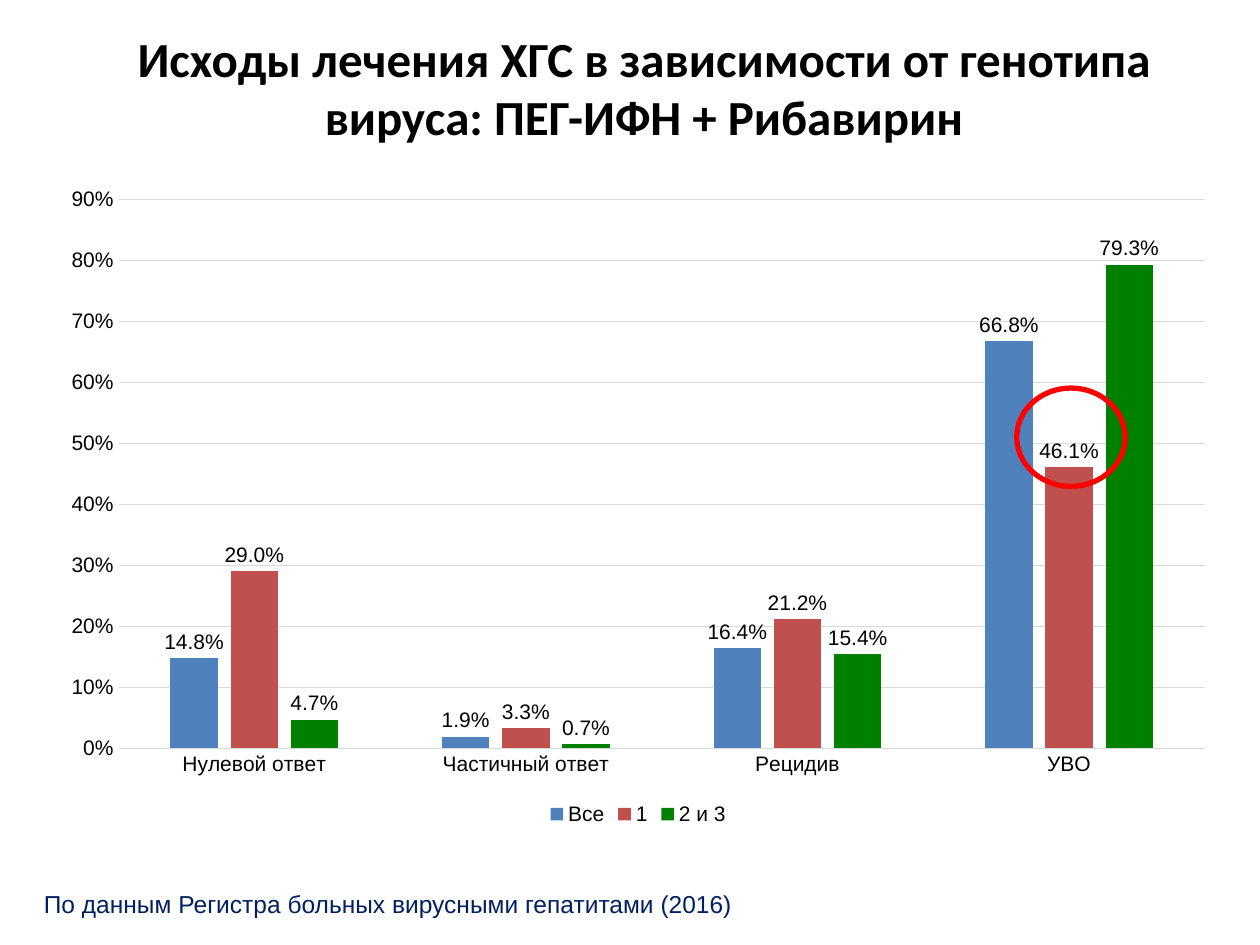
from dataclasses import dataclass

from pptx import Presentation
from pptx.chart.data import CategoryChartData
from pptx.dml.color import RGBColor
from pptx.enum.chart import XL_CHART_TYPE, XL_LABEL_POSITION, XL_LEGEND_POSITION, XL_TICK_MARK
from pptx.enum.shapes import MSO_SHAPE
from pptx.enum.text import MSO_ANCHOR, PP_ALIGN
from pptx.util import Inches, Pt

BLACK = "000000"
GRID_GREY = "D9D9D9"


@dataclass(frozen=True)
class Box:
    left: float
    top: float
    width: float
    height: float

    def lengths(self) -> tuple:
        return tuple(Inches(v) for v in (self.left, self.top, self.width, self.height))


@dataclass(frozen=True)
class GenotypeSeries:
    name: str
    shares: tuple[float, ...]
    color: str


@dataclass(frozen=True)
class Caption:
    text: str
    box: Box
    font: str
    size: int
    color: str
    bold: bool = False
    align: PP_ALIGN = PP_ALIGN.LEFT
    anchor: MSO_ANCHOR = MSO_ANCHOR.TOP


OUTCOMES = ("Нулевой ответ", "Частичный ответ", "Рецидив", "УВО")
GENOTYPES = (
    GenotypeSeries("Все", (0.148, 0.019, 0.164, 0.668), "4F81BD"),
    GenotypeSeries("1", (0.29, 0.033, 0.212, 0.461), "C0504D"),
    GenotypeSeries("2 и 3", (0.047, 0.007, 0.154, 0.793), "008000"),
)
SOURCE = Caption("По данным Регистра больных вирусными гепатитами (2016)",
                 Box(0.25, 7.01, 8.57, 0.34), "Arial", 14, "002060")
TITLE = Caption("Исходы лечения ХГС в зависимости от генотипа вируса: ПЕГ-ИФН + Рибавирин",
                Box(0.64, 0.37, 8.94, 0.64), "Calibri", 28, BLACK, True,
                PP_ALIGN.CENTER, MSO_ANCHOR.MIDDLE)


def rgb(hex_color: str) -> RGBColor:
    return RGBColor.from_string(hex_color)


def set_font(font, name: str, size: int, color: str, bold: bool = False) -> None:
    font.name = name
    font.size = Pt(size)
    font.bold = bold
    font.color.rgb = rgb(color)


def set_line(line, color: str, width: float) -> None:
    line.color.rgb = rgb(color)
    line.width = Pt(width)


def add_caption(slide, caption: Caption) -> None:
    frame = slide.shapes.add_textbox(*caption.box.lengths()).text_frame
    frame.word_wrap = True
    frame.vertical_anchor = caption.anchor
    paragraph = frame.paragraphs[0]
    paragraph.text = caption.text
    paragraph.alignment = caption.align
    set_font(paragraph.font, caption.font, caption.size, caption.color, caption.bold)


def style_axes(chart) -> None:
    outcome_axis, share_axis = chart.category_axis, chart.value_axis
    for axis in (outcome_axis, share_axis):
        axis.major_tick_mark = XL_TICK_MARK.NONE
        axis.minor_tick_mark = XL_TICK_MARK.NONE
        set_font(axis.tick_labels.font, "Arial", 12, BLACK)
    set_line(outcome_axis.format.line, GRID_GREY, 0.75)
    share_axis.format.line.fill.background()
    share_axis.minimum_scale = 0
    share_axis.maximum_scale = 0.9
    share_axis.major_unit = 0.1
    share_axis.tick_labels.number_format = "0%"
    share_axis.tick_labels.number_format_is_linked = False
    set_line(share_axis.major_gridlines.format.line, GRID_GREY, 0.75)


def style_series(series, color: str) -> None:
    series.format.fill.solid()
    series.format.fill.fore_color.rgb = rgb(color)
    series.invert_if_negative = False
    labels = series.data_labels
    labels.show_value = True
    labels.number_format = "0.0%"
    labels.number_format_is_linked = False
    labels.position = XL_LABEL_POSITION.OUTSIDE_END
    set_font(labels.font, "Arial", 12, BLACK)


def add_outcome_chart(slide, box: Box) -> None:
    outcomes = CategoryChartData(number_format="0.0%")
    outcomes.categories = OUTCOMES
    for genotype in GENOTYPES:
        outcomes.add_series(genotype.name, genotype.shares)
    chart = slide.shapes.add_chart(
        XL_CHART_TYPE.COLUMN_CLUSTERED, *box.lengths(), outcomes).chart
    set_font(chart.font, "Arial", 12, BLACK)
    chart.has_title = False
    chart.has_legend = True
    chart.legend.position = XL_LEGEND_POSITION.BOTTOM
    chart.legend.include_in_layout = False
    set_font(chart.legend.font, "Arial", 12, BLACK)
    style_axes(chart)
    columns = chart.plots[0]
    columns.vary_by_categories = False
    columns.gap_width = 219
    columns.overlap = -27
    for series, genotype in zip(columns.series, GENOTYPES):
        style_series(series, genotype.color)


def add_highlight(slide, box: Box) -> None:
    ring = slide.shapes.add_shape(MSO_SHAPE.OVAL, *box.lengths())
    ring.shadow.inherit = False
    ring.fill.background()
    set_line(ring.line, "FF0000", 3)


def main() -> None:
    presentation = Presentation()
    presentation.slide_width = Inches(10)
    presentation.slide_height = Inches(7.5)
    slide = presentation.slides.add_slide(presentation.slide_layouts[6])
    add_outcome_chart(slide, Box(0.38, 1.39, 9.37, 5.2))
    add_caption(slide, SOURCE)
    add_caption(slide, TITLE)
    add_highlight(slide, Box(8.07, 3.08, 0.86, 0.78))
    presentation.save("out.pptx")


if __name__ == "__main__":
    main()
